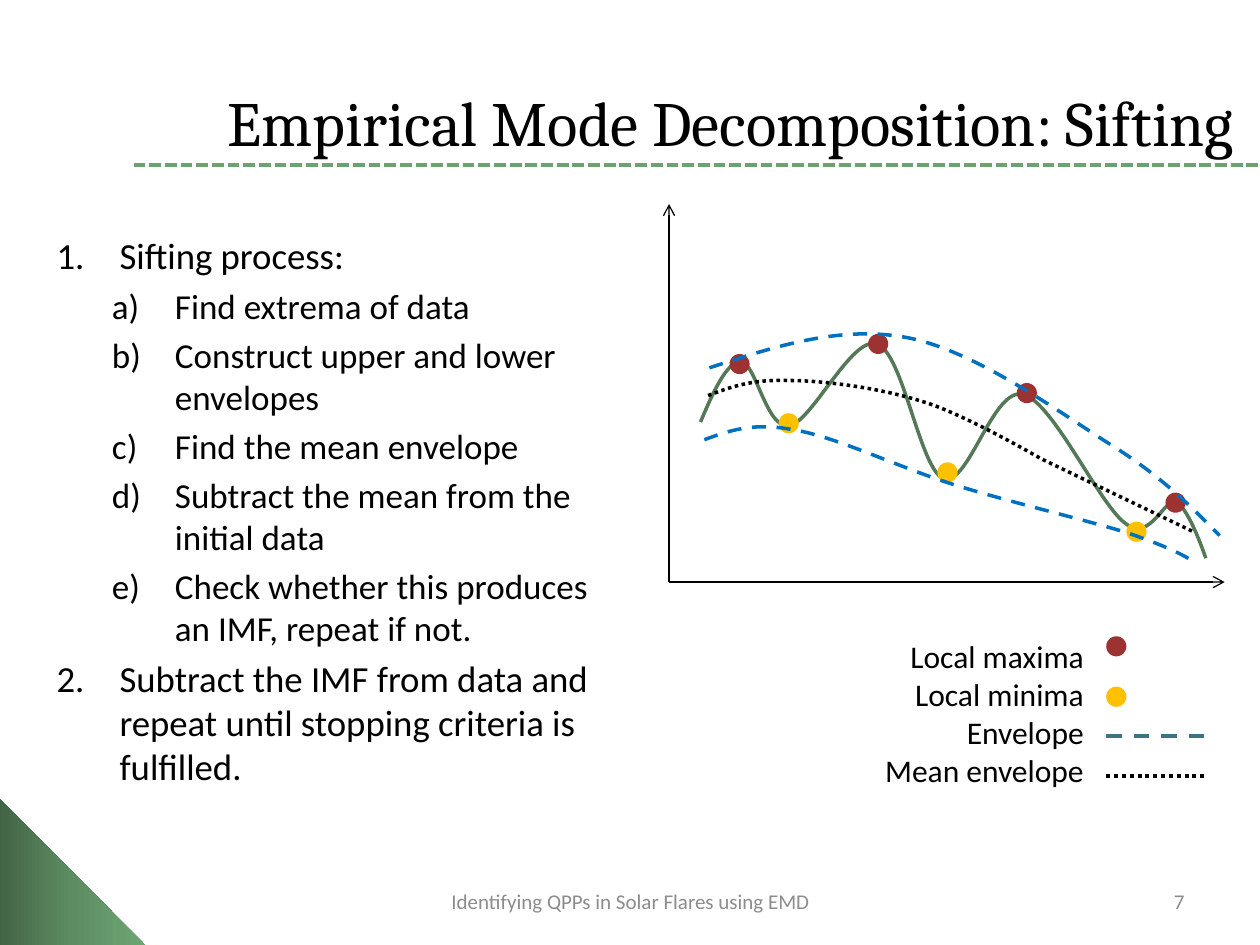
from copy import deepcopy

from pptx import Presentation
from pptx.dml.color import RGBColor
from pptx.enum.dml import MSO_LINE
from pptx.enum.shapes import MSO_CONNECTOR, MSO_SHAPE as SHAPE
from pptx.enum.text import MSO_ANCHOR as ANCHOR, PP_ALIGN as ALIGN
from pptx.oxml.ns import qn
from pptx.util import Inches, Pt
from lxml.etree import SubElement

BLACK = RGBColor(0, 0, 0)
GRAY = RGBColor(0x8C, 0x8C, 0x8C)
RULE_GREEN = RGBColor(0x6E, 0xA1, 0x72)
SIGNAL_GREEN = RGBColor(0x54, 0x79, 0x57)
CORNER_GREENS = [RGBColor(0x41, 0x63, 0x44), RGBColor(0x5D, 0x8C, 0x61), RGBColor(0x6E, 0xA7, 0x73)]
RED = RGBColor(0x9D, 0x32, 0x32)
YELLOW = RGBColor(0xFF, 0xC0, 0x00)
BLUE = RGBColor(0x00, 0x70, 0xC0)
TEAL = RGBColor(0x3C, 0x74, 0x83)

DOT = 0.16
NUMBERING = {0: ("arabicPeriod", 0.5, 21), 1: ("alphaLcParenR", 0.94, 20)}

STEPS = [
    (0, "Sifting process:"),
    (1, "Find extrema of data"),
    (1, "Construct upper and lower envelopes"),
    (1, "Find the mean envelope"),
    (1, "Subtract the mean from the initial data"),
    (1, "Check whether this produces an IMF, repeat if not."),
    (0, "Subtract the IMF from data and repeat until stopping criteria is fulfilled."),
]

# Each curve: start point, then cubic segments (control, control, end) or straight ones (end)
SIGNAL = [(5.56, 3.35),
          (5.66, 3.11, 5.77, 2.87, 5.88, 2.87), (6, 2.88, 6.08, 3.4, 6.26, 3.38),
          (6.44, 3.36, 6.76, 2.66, 6.96, 2.73), (7.17, 2.8, 7.3, 3.73, 7.49, 3.8),
          (7.69, 3.86, 7.88, 3.07, 8.12, 3.13), (8.36, 3.19, 8.73, 4.02, 8.94, 4.16),
          (9.14, 4.3, 9.23, 3.95, 9.34, 3.99), (9.44, 4.04, 9.57, 4.43, 9.57, 4.43),
          (9.57, 4.43)]
UPPER = [(5.63, 2.92),
         (6.15, 2.75, 6.67, 2.58, 7.2, 2.68), (7.73, 2.78, 8.39, 3.26, 8.8, 3.52),
         (9.22, 3.78, 9.45, 4.02, 9.68, 4.25)]
LOWER = [(5.59, 3.49),
         (5.78, 3.42, 5.97, 3.35, 6.29, 3.41), (6.62, 3.46, 7.11, 3.7, 7.55, 3.84),
         (7.99, 3.98, 8.63, 4.13, 8.95, 4.23), (9.27, 4.34, 9.38, 4.4, 9.48, 4.46)]
MEAN = [(5.62, 3.14),
        (5.8, 3.07, 5.97, 3.01, 6.26, 3.02), (6.54, 3.02, 6.99, 3.08, 7.33, 3.19),
        (7.66, 3.29, 8.26, 3.64, 8.26, 3.64), (9.47, 4.22)]
MAXIMA = [(5.79, 2.81), (6.89, 2.65), (8.07, 3.04), (9.25, 3.91)]
MINIMA = [(6.18, 3.28), (7.44, 3.67), (8.94, 4.14)]


def bend_segments(sp, segments):
    """Turn the straight segments of a freeform into cubic ones where controls are given."""
    for ln_to, segment in zip(list(sp._element.iter(qn("a:lnTo"))), segments):
        if len(segment) == 2:
            continue
        ln_to.tag = qn("a:cubicBezTo")
        end = ln_to[0]
        for x, y in (segment[:2], segment[2:4]):
            pt = deepcopy(end)
            pt.set("x", str(Inches(x) - sp.left))
            pt.set("y", str(Inches(y) - sp.top))
            end.addprevious(pt)


def add_run(p, text, size=18, color=BLACK, font="Calibri"):
    r = p.add_run()
    r.text = text
    r.font.size = Pt(size)
    r.font.name = font
    r.font.color.rgb = color


def style_line(line, color, width, dash=None):
    line.color.rgb = color
    line.width = Pt(width)
    if dash is not None:
        line.dash_style = dash


class SlideBuilder:
    def __init__(self, slide):
        self.s = slide

    def text(self, x, y, w, h, lines=(), align=ALIGN.LEFT, anchor=ANCHOR.TOP, **fmt):
        tf = self.s.shapes.add_textbox(Inches(x), Inches(y), Inches(w), Inches(h)).text_frame
        tf.word_wrap = True
        tf.vertical_anchor = anchor
        for i, line in enumerate(lines):
            p = tf.add_paragraph() if i else tf.paragraphs[0]
            p.alignment = align
            add_run(p, line, **fmt)
        return tf

    def numbered_list(self, x, y, w, h, items):
        tf = self.text(x, y, w, h)
        for i, (level, line) in enumerate(items):
            p = tf.add_paragraph() if i else tf.paragraphs[0]
            scheme, indent, size = NUMBERING[level]
            p.level = level
            pPr = p._p.get_or_add_pPr()
            pPr.set("marL", str(Inches(indent)))
            pPr.set("indent", str(Inches(-0.5)))
            SubElement(pPr, qn("a:buFont"), typeface="+mj-lt")
            SubElement(pPr, qn("a:buAutoNum"), type=scheme)
            p.space_before = Pt(0.2 * size if i else 0)
            add_run(p, line, size)

    def line(self, x1, y1, x2, y2, color=BLACK, width=0.75, dash=None, arrow=False):
        c = self.s.shapes.add_connector(MSO_CONNECTOR.STRAIGHT, Inches(x1), Inches(y1),
                                        Inches(x2), Inches(y2))
        style_line(c.line, color, width, dash)
        if arrow:
            SubElement(c.line._get_or_add_ln(), qn("a:tailEnd"), type="arrow")
        SubElement(c._element.spPr, qn("a:effectLst"))

    def curve(self, curve, color, dash=None):
        start, *segments = curve
        builder = self.s.shapes.build_freeform(Inches(start[0]), Inches(start[1]))
        builder.add_line_segments([(Inches(seg[-2]), Inches(seg[-1])) for seg in segments],
                                  close=False)
        sp = builder.convert_to_shape()
        bend_segments(sp, segments)
        sp.shadow.inherit = False
        sp.fill.background()
        style_line(sp.line, color, 2, dash)

    def shape(self, kind, x, y, w, h):
        sp = self.s.shapes.add_shape(kind, Inches(x), Inches(y), Inches(w), Inches(h))
        sp.shadow.inherit = False
        sp.line.fill.background()
        return sp

    def dot(self, x, y, color):
        fill = self.shape(SHAPE.OVAL, x, y, DOT, DOT).fill
        fill.solid()
        fill.fore_color.rgb = color

    def corner(self, x, y, w, h, colors):
        fill = self.shape(SHAPE.RIGHT_TRIANGLE, x, y, w, h).fill
        fill.gradient()
        fill.gradient_angle = 0
        first = fill.gradient_stops[0]._gs
        first.addnext(deepcopy(first))
        for i, (stop, color) in enumerate(zip(fill.gradient_stops, colors)):
            stop.position = i / (len(colors) - 1)
            stop.color.rgb = color


def main():
    prs = Presentation()
    prs.slide_width, prs.slide_height = Inches(10), Inches(7.5)
    b = SlideBuilder(prs.slides.add_slide(prs.slide_layouts[6]))

    b.curve(SIGNAL, SIGNAL_GREEN)
    b.corner(-0.04, 6.3, 1.22, 1.23, CORNER_GREENS)
    b.text(0.89, 0.34, 9, 1.25, ["Empirical Mode Decomposition: Sifting"],
           ALIGN.RIGHT, ANCHOR.MIDDLE, size=36, font="Cambria")
    b.numbered_list(0.35, 1.8, 4.72, 5.21, STEPS)
    b.text(3.42, 6.95, 3.17, 0.4, ["Identifying QPPs in Solar Flares using EMD"],
           ALIGN.CENTER, ANCHOR.MIDDLE, size=12, color=GRAY)
    b.text(7.17, 6.95, 2.33, 0.4, ["7"], ALIGN.RIGHT, ANCHOR.MIDDLE, size=12, color=GRAY)
    b.line(1.06, 1.31, 10, 1.31, RULE_GREEN, 2.25, MSO_LINE.SQUARE_DOT)

    for end in ((5.31, 1.62), (9.72, 4.62)):
        b.line(5.31, 4.62, *end, arrow=True)
    for color, places in ((RED, MAXIMA), (YELLOW, MINIMA)):
        for x, y in places:
            b.dot(x, y, color)
    b.curve(UPPER, BLUE, MSO_LINE.DASH)
    b.curve(LOWER, BLUE, MSO_LINE.DASH)
    b.curve(MEAN, BLACK, MSO_LINE.ROUND_DOT)

    b.dot(8.78, 5.05, RED)
    b.dot(8.78, 5.45, YELLOW)
    b.line(8.78, 5.84, 9.57, 5.84, TEAL, 2.25, MSO_LINE.DASH)
    b.line(8.78, 6.16, 9.57, 6.16, BLACK, 2.25, MSO_LINE.ROUND_DOT)
    b.text(5.39, 5.01, 3.31, 1.31,
           ["Local maxima", "Local minima", "Envelope", "Mean envelope"], ALIGN.RIGHT)

    prs.save("out.pptx")


if __name__ == "__main__":
    main()
